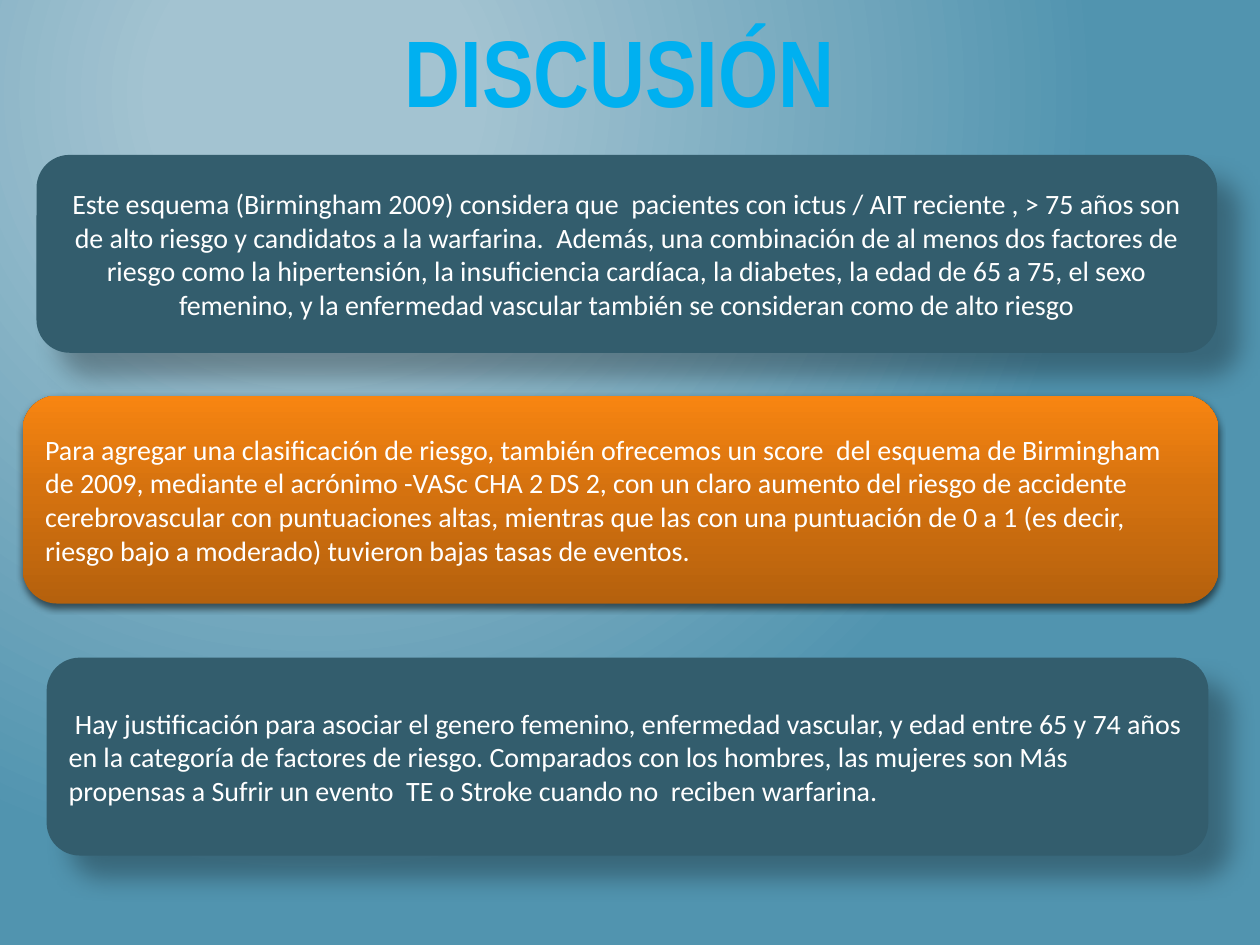
from pptx import Presentation
from pptx import util as u
from pptx.dml.color import RGBColor
from pptx.enum import shapes, text
from pptx.oxml import parse_xml
from pptx.oxml.ns import nsdecls, qn

WIDTH, HEIGHT = 10, 7.5
SLATE = "335D6D"
ORANGE_STOPS = [(0, "B5610D"), (55, "D5720F"), (100, "F88511")]
BACKGROUND_STOPS = [(20, "A3C3D1"), (100, "5194AF")]
# Shadows: opacity %, blur pt, distance pt, direction in degrees
DEEP_SHADOW = (30, 15, 18, 45)
LOW_SHADOW = (55, 4, 2, 90)
CENTER, LEFT = text.PP_ALIGN.CENTER, text.PP_ALIGN.LEFT

# Panels: left, top, width, height (inches), alignment, fill, shadow, wording
PANELS = [
    ((0.29, 1.23, 9.37, 1.57), CENTER, SLATE, DEEP_SHADOW,
     "Este esquema (Birmingham 2009) considera que  pacientes con ictus / AIT "
     "reciente , > 75 años son de alto riesgo y candidatos a la warfarina.  "
     "Además, una combinación de al menos dos factores de riesgo como la "
     "hipertensión, la insuficiencia cardíaca, la diabetes, la edad de 65 a 75, "
     "el sexo femenino, y la enfermedad vascular también se consideran como de "
     "alto riesgo"),
    ((0.18, 3.14, 9.49, 1.65), LEFT, ORANGE_STOPS, LOW_SHADOW,
     "Para agregar una clasificación de riesgo, también ofrecemos un score  del "
     "esquema de Birmingham de 2009, mediante el acrónimo -VASc CHA 2 DS 2, con "
     "un claro aumento del riesgo de accidente cerebrovascular con puntuaciones "
     "altas, mientras que las con una puntuación de 0 a 1 (es decir, riesgo bajo "
     "a moderado) tuvieron bajas tasas de eventos."),
    ((0.37, 5.22, 9.22, 1.57), LEFT, SLATE, DEEP_SHADOW,
     " Hay justificación para asociar el genero femenino, enfermedad vascular, y "
     "edad entre 65 y 74 años en la categoría de factores de riesgo. Comparados "
     "con los hombres, las mujeres son Más propensas a Sufrir un evento  TE o "
     "Stroke cuando no  reciben warfarina."),
]


def color(hex_value):
    return RGBColor.from_string(hex_value)


def gradient_xml(stops, direction):
    stop_xml = "".join(
        f'<a:gs pos="{share * 1000}"><a:srgbClr val="{tone}"/></a:gs>'
        for share, tone in stops)
    return (f'<a:gradFill {nsdecls("a")} rotWithShape="1">'
            f'<a:gsLst>{stop_xml}</a:gsLst>{direction}</a:gradFill>')


def set_background(slide):
    glow = ('<a:path path="circle"><a:fillToRect l="50000" t="20000" '
            'r="100000" b="100000"/></a:path>')
    slide.element.find(qn("p:cSld")).insert(0, parse_xml(
        f'<p:bg {nsdecls("p", "a")}><p:bgPr>'
        f'{gradient_xml(BACKGROUND_STOPS, glow)}<a:effectLst/></p:bgPr></p:bg>'))


def place(shape, box):
    for side, inches in zip(("left", "top", "width", "height"), box):
        setattr(shape, side, u.Inches(inches))


def write(shape, wording, align, tone, **font_format):
    frame = shape.text_frame
    frame.word_wrap = True
    frame.auto_size = text.MSO_AUTO_SIZE.NONE
    frame.vertical_anchor = text.MSO_ANCHOR.MIDDLE
    paragraph = frame.paragraphs[0]
    paragraph.alignment = align
    run = paragraph.add_run()
    run.text = wording
    run.font.color.rgb = color(tone)
    for name, value in font_format.items():
        setattr(run.font, name, value)


def add_shadow(shape, opacity, blur, distance, direction):
    shape.shadow.inherit = False
    shape.element.spPr.find(qn("a:effectLst")).append(parse_xml(
        f'<a:outerShdw {nsdecls("a")} blurRad="{u.Pt(blur)}" '
        f'dist="{u.Pt(distance)}" dir="{direction * 60000}" algn="ctr" '
        f'rotWithShape="0"><a:srgbClr val="000000">'
        f'<a:alpha val="{opacity * 1000}"/></a:srgbClr></a:outerShdw>'))


def add_panel(slide, box, align, fill, shadow, wording):
    panel = slide.shapes.add_shape(
        shapes.MSO_SHAPE.ROUNDED_RECTANGLE, *map(u.Inches, box))
    if isinstance(fill, str):
        panel.fill.solid()
        panel.fill.fore_color.rgb = color(fill)
    else:
        upward = '<a:lin ang="16200000" scaled="0"/>'
        panel.element.spPr.find(qn("a:prstGeom")).addnext(
            parse_xml(gradient_xml(fill, upward)))
    panel.line.fill.background()
    add_shadow(panel, *shadow)
    write(panel, wording, align, "FFFFFF", name="Calibri", size=u.Pt(16))


def main():
    deck = Presentation()
    deck.slide_width, deck.slide_height = u.Inches(WIDTH), u.Inches(HEIGHT)
    slide = deck.slides.add_slide(deck.slide_layouts.get_by_name("Title Only"))
    set_background(slide)

    # Heading
    heading = slide.shapes.title
    place(heading, (1.69, 0.04, 6.46, 1.02))
    write(heading, "DISCUSIÓN", CENTER, "00B0F0",
          name="Arial Narrow", size=u.Pt(54), bold=True)

    # Discussion points
    for panel in PANELS:
        add_panel(slide, *panel)

    deck.save("out.pptx")


if __name__ == "__main__":
    main()
